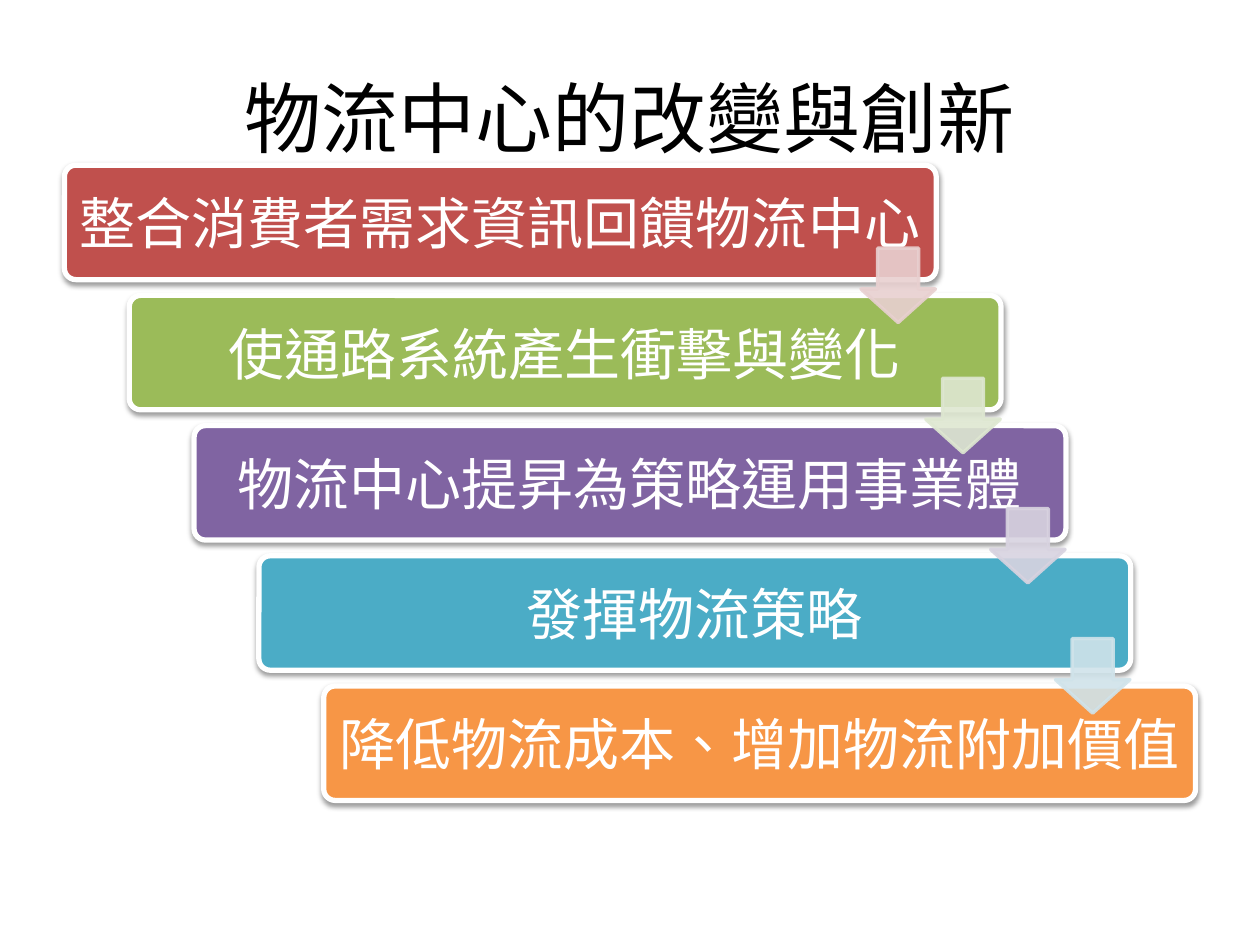
from lxml import etree
from pptx import Presentation
from pptx import util as u
from pptx.dml.color import RGBColor
from pptx.enum import lang, shapes, text
from pptx.oxml import ns

COLORS = {
    "white": "FFFFFF", "black": "000000",
    "red": "C0504D", "green": "9BBB59", "purple": "8064A2",
    "blue": "4BACC6", "orange": "F79646",
    "red_arrow": "E8D0D0", "green_arrow": "DEE7D1",
    "purple_arrow": "D8D3E0", "blue_arrow": "D0E3EA",
}
STEPS = [
    ("整合消費者需求資訊回饋物流中心", "red"),
    ("使通路系統產生衝擊與變化", "green"),
    ("物流中心提昇為策略運用事業體", "purple"),
    ("發揮物流策略", "blue"),
    ("降低物流成本、增加物流附加價值", "orange"),
]
STEP_X, STEP_Y = 37.05, 74.4


def color(name):
    return RGBColor.from_string(COLORS[name])


def add_xml(parent, tag, **attributes):
    return etree.SubElement(parent, ns.qn(tag), {k: str(v) for k, v in attributes.items()})


class StaircaseSlide:
    font_name = "Roboto Slab"

    def __init__(self, presentation):
        self.slide = presentation.slides.add_slide(presentation.slide_layouts[6])

    def label(self, shape, content, size, color_name):
        frame = shape.text_frame
        frame.word_wrap = True
        frame.vertical_anchor = text.MSO_ANCHOR.MIDDLE
        frame.margin_left = frame.margin_right = 0
        paragraph = frame.paragraphs[0]
        paragraph.alignment = text.PP_ALIGN.CENTER
        run = paragraph.add_run()
        run.text = content
        run.font.name = self.font_name
        run.font.size = u.Pt(size)
        run.font.language_id = lang.MSO_LANGUAGE_ID.TRADITIONAL_CHINESE
        run.font.color.rgb = color(color_name)

    def title(self, content, left, top, width, height):
        box = self.slide.shapes.add_textbox(u.Pt(left), u.Pt(top), u.Pt(width), u.Pt(height))
        self.label(box, content, 44, "black")

    def preset(self, kind, bounds, fill, line, line_width, adjustments):
        shape = self.slide.shapes.add_shape(kind, *(u.Pt(value) for value in bounds))
        shape.shadow.inherit = False
        shape.fill.solid()
        shape.fill.fore_color.rgb = color(fill)
        shape.line.color.rgb = color(line)
        shape.line.width = u.Pt(line_width)
        for index, value in enumerate(adjustments):
            shape.adjustments[index] = value
        return shape

    def bar(self, content, fill, left, top):
        bar = self.preset(shapes.MSO_SHAPE.ROUNDED_RECTANGLE, (left, top, 498.2, 65.4),
                          fill, "white", 3, [0.1])
        effects = bar._element.spPr.find(ns.qn("a:effectLst"))
        shadow = add_xml(effects, "a:outerShdw", blurRad=u.Pt(3.1), dist=u.Pt(1.6),
                         dir=5400000, rotWithShape=0)
        shadow_color = add_xml(shadow, "a:srgbClr", val=COLORS["black"])
        add_xml(shadow_color, "a:alpha", val=38000)
        self.label(bar, content, 32, "white")

    def arrow(self, fill, left, top):
        arrow = self.preset(shapes.MSO_SHAPE.DOWN_ARROW, (left, top, 42.5, 42.5),
                            fill, fill, 2, [0.55, 0.45])
        for paint in arrow._element.spPr.iter(ns.qn("a:srgbClr")):
            add_xml(paint, "a:alpha", val=90000)


def main():
    presentation = Presentation()
    presentation.slide_width = u.Pt(720)
    presentation.slide_height = u.Pt(540)
    staircase = StaircaseSlide(presentation)
    for index, (content, fill) in enumerate(STEPS):
        staircase.bar(content, fill, 36.8 + index * STEP_X, 94.4 + index * STEP_Y)
    staircase.title("物流中心的改變與創新", 36, 21.6, 648, 90)
    for index, (_, fill) in enumerate(STEPS[:-1]):
        staircase.arrow(f"{fill}_arrow", 492 + index * STEP_X, 141.8 + index * STEP_Y)
    presentation.save("out.pptx")


if __name__ == "__main__":
    main()
